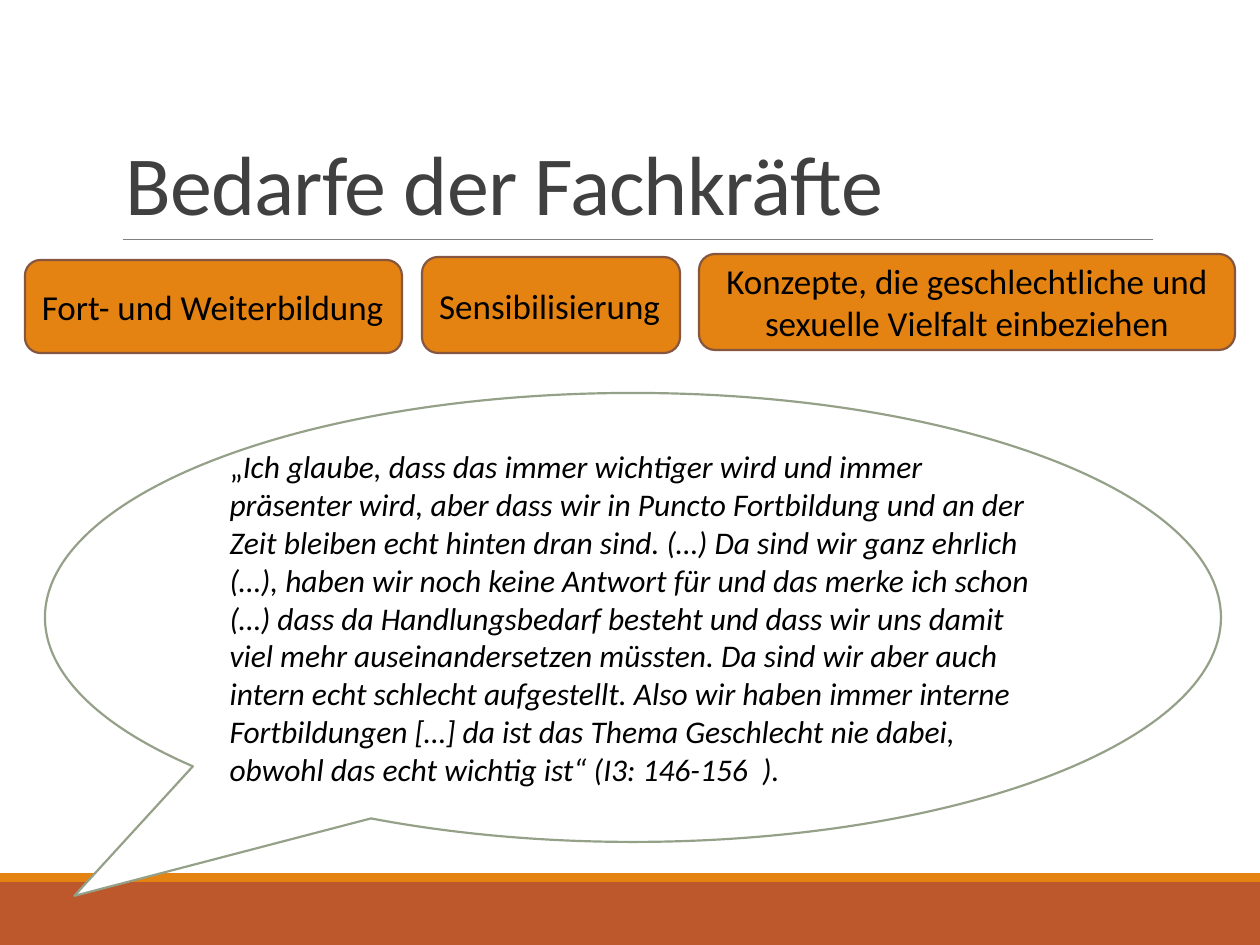
from dataclasses import dataclass

from lxml import etree
from pptx import Presentation
from pptx.dml.color import RGBColor
from pptx.enum.shapes import MSO_CONNECTOR, MSO_SHAPE
from pptx.enum.text import MSO_ANCHOR, MSO_AUTO_SIZE, PP_ALIGN
from pptx.oxml.ns import qn
from pptx.util import Emu, Pt

RECT, ROUNDED = MSO_SHAPE.RECTANGLE, MSO_SHAPE.ROUNDED_RECTANGLE
CALLOUT, STRAIGHT = MSO_SHAPE.OVAL_CALLOUT, MSO_CONNECTOR.STRAIGHT
LEFT, CENTER = PP_ALIGN.LEFT, PP_ALIGN.CENTER
MIDDLE, BOTTOM = MSO_ANCHOR.MIDDLE, MSO_ANCHOR.BOTTOM

RUST = RGBColor(0xBD, 0x58, 0x2C)
ORANGE = RGBColor(0xE4, 0x83, 0x12)
BOX_ORANGE = RGBColor(0xE4, 0x83, 0x11)
BROWN = RGBColor(0x86, 0x56, 0x40)
SAGE = RGBColor(0x94, 0xA0, 0x88)
GRAY = RGBColor(0x80, 0x80, 0x80)
DARK = RGBColor(0x40, 0x40, 0x40)
WHITE = RGBColor(0xFF, 0xFF, 0xFF)
BLACK = RGBColor(0, 0, 0)

FONT = "Calibri"
PX_PER_INCH = 126
WIDTH, HEIGHT = 1260, 945

QUOTE = (
    "Ich glaube, dass das immer wichtiger wird und immer präsenter wird, aber dass "
    "wir in Puncto Fortbildung und an der Zeit bleiben echt hinten dran sind. (…) Da "
    "sind wir ganz ehrlich (…), haben wir noch keine Antwort für und das merke ich "
    "schon (…) dass da Handlungsbedarf besteht und dass wir uns damit viel mehr "
    "auseinandersetzen müssten. Da sind wir aber auch intern echt schlecht "
    "aufgestellt. Also wir haben immer interne Fortbildungen […] da ist das Thema "
    "Geschlecht nie dabei, obwohl das echt wichtig ist“ (I3: 146-156  )."
)


@dataclass
class Box:
    left: int
    top: int
    width: int
    height: int


@dataclass
class Need:
    box: Box
    text: str
    align: PP_ALIGN = LEFT


NEEDS = [
    Need(Box(25, 260, 377, 93), "Fort- und Weiterbildung"),
    Need(Box(422, 257, 258, 96), "Sensibilisierung"),
    Need(Box(699, 254, 536, 96),
         "Konzepte, die geschlechtliche und sexuelle Vielfalt einbeziehen", CENTER),
]


def px(n: int) -> Emu:
    return Emu(round(n * 914400 / PX_PER_INCH))


def add_box(shapes, kind, box: Box, fill: RGBColor, line: RGBColor | None = None):
    s = shapes.add_shape(kind, px(box.left), px(box.top), px(box.width), px(box.height))
    s.shadow.inherit = False
    s.fill.solid()
    s.fill.fore_color.rgb = fill
    if line is None:
        s.line.fill.background()
    else:
        s.line.color.rgb = line
        s.line.width = Pt(1.25)
    return s


def add_run(p, text: str, size: int, color: RGBColor = BLACK, **style):
    r = p.add_run()
    r.text = text
    for name, value in {"name": FONT, "size": Pt(size), **style}.items():
        setattr(r.font, name, value)
    r.font.color.rgb = color
    return r


def start_text(s, align: PP_ALIGN, anchor: MSO_ANCHOR = MIDDLE):
    tf = s.text_frame
    tf.word_wrap = True
    tf.auto_size = MSO_AUTO_SIZE.NONE
    tf.vertical_anchor = anchor
    p = tf.paragraphs[0]
    p.alignment = align
    return p


def add_rule(shapes, left: int, right: int, y: int) -> None:
    c = shapes.add_connector(STRAIGHT, px(left), px(y), px(right), px(y))
    c.line.color.rgb = GRAY
    c.line.width = Pt(0.5)
    etree.SubElement(c._element.spPr, qn("a:effectLst"))


def set_title(s, box: Box, text: str) -> None:
    for name in ("left", "top", "width", "height"):
        setattr(s, name, px(getattr(box, name)))
    p = start_text(s, LEFT, BOTTOM)
    p.line_spacing = 0.85
    r = add_run(p, text, 48, DARK)
    r.font._element.set("spc", "-50")


def main() -> None:
    prs = Presentation()
    prs.slide_width, prs.slide_height = px(WIDTH), px(HEIGHT)
    slide = prs.slides.add_slide(prs.slide_layouts[5])
    shapes = slide.shapes

    # Footer bands and the rule under the title
    add_box(shapes, RECT, Box(0, 882, WIDTH, 63), RUST)
    add_box(shapes, RECT, Box(0, 873, WIDTH, 9), ORANGE)
    add_rule(shapes, 123, 1153, 239)

    # Title
    set_title(shapes.title, Box(113, 39, 1040, 200), "Bedarfe der Fachkräfte")

    # Needs
    for need in NEEDS:
        s = add_box(shapes, ROUNDED, need.box, BOX_ORANGE, BROWN)
        add_run(start_text(s, need.align), need.text, 20)

    # Quote in a speech bubble
    bubble = add_box(shapes, CALLOUT, Box(45, 393, 1176, 449), WHITE, SAGE)
    bubble.adjustments[0], bubble.adjustments[1] = -0.475, 0.62
    p = start_text(bubble, LEFT)
    add_run(p, "„", 18)
    add_run(p, QUOTE, 18, italic=True)

    prs.save("out.pptx")


if __name__ == "__main__":
    main()
